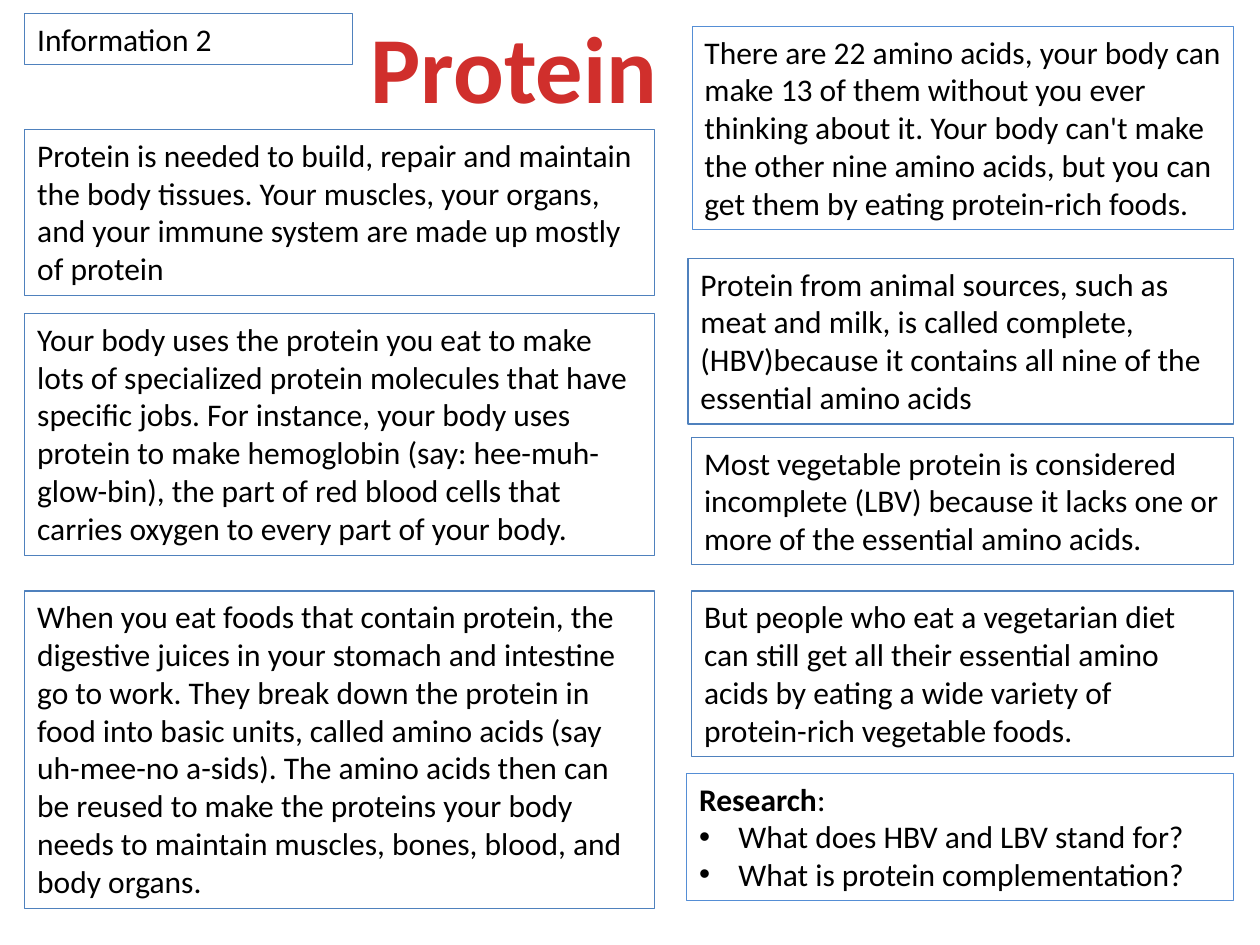
from dataclasses import dataclass

from lxml.etree import SubElement
from pptx import Presentation
from pptx.dml.color import RGBColor as Color
from pptx.enum.shapes import MSO_SHAPE as Preset
from pptx.enum.text import MSO_ANCHOR as Anchor
from pptx.enum.text import MSO_AUTO_SIZE as AutoSize
from pptx.enum.text import PP_ALIGN as Align
from pptx.oxml.ns import qn
from pptx.util import Pt


@dataclass(frozen=True)
class Theme:
    font: str = "Calibri"
    title_size: float = 54
    body_size: float = 18
    title: str = "D02F2C"
    text: str = "000000"
    paper: str = "FFFFFF"
    border: str = "4F81BD"
    light_border: str = "558ED5"
    border_width: float = 0.75
    thin_border_width: float = 0.5
    bullet_indent: float = 22.5


class SlideBuilder:
    def __init__(self, slide, theme):
        self.slide = slide
        self.theme = theme

    def add_run(self, paragraph, text, size=None, color=None, bold=False):
        run = paragraph.add_run()
        run.text = text
        font = run.font
        font.name = self.theme.font
        font.size = Pt(size or self.theme.body_size)
        font.bold = bold
        font.color.rgb = Color.from_string(color or self.theme.text)

    def title(self, text, left, top, width, height):
        shape = self.slide.shapes.add_textbox(Pt(left), Pt(top), Pt(width), Pt(height))
        frame = shape.text_frame
        frame.word_wrap = True
        frame.auto_size = AutoSize.SHAPE_TO_FIT_TEXT
        paragraph = frame.paragraphs[0]
        paragraph.alignment = Align.CENTER
        self.add_run(paragraph, text, self.theme.title_size, self.theme.title, bold=True)

    def box(self, left, top, width, height, text="", border=None, line_width=None, fill=None):
        shape = self.slide.shapes.add_shape(
            Preset.RECTANGLE, Pt(left), Pt(top), Pt(width), Pt(height))
        shape.shadow.inherit = False
        if fill:
            shape.fill.solid()
            shape.fill.fore_color.rgb = Color.from_string(fill)
        else:
            shape.fill.background()
        shape.line.color.rgb = Color.from_string(border or self.theme.border)
        shape.line.width = Pt(line_width or self.theme.border_width)
        frame = shape.text_frame
        frame.word_wrap = True
        frame.vertical_anchor = Anchor.TOP
        frame.auto_size = AutoSize.SHAPE_TO_FIT_TEXT
        paragraph = frame.paragraphs[0]
        paragraph.alignment = Align.LEFT
        if text:
            self.add_run(paragraph, text)
        return frame

    def bullet(self, frame, text):
        paragraph = frame.add_paragraph()
        paragraph.alignment = Align.LEFT
        self.add_run(paragraph, text)
        properties = paragraph._p.get_or_add_pPr()
        indent = Pt(self.theme.bullet_indent)
        properties.set("marL", str(indent))
        properties.set("indent", str(-indent))
        SubElement(properties, qn("a:buFont"), typeface="Arial")
        SubElement(properties, qn("a:buChar"), char="•")


LEFT_EDGE, LEFT_WIDTH = 14.2, 360
RIGHT_EDGE = 705

# Left column: top, height, text
LEFT_NOTES = [
    (74.1, 94.6, "Protein is needed to build, repair and maintain the body tissues. "
     "Your muscles, your organs, and your immune system are made up mostly of protein"),
    (179.2, 138.2, "Your body uses the protein you eat to make lots of specialized protein "
     "molecules that have specific jobs. For instance, your body uses protein to make "
     "hemoglobin (say: hee-muh-glow-bin), the part of red blood cells that carries oxygen "
     "to every part of your body."),
    (337.7, 181.7, "When you eat foods that contain protein, the digestive juices in your "
     "stomach and intestine go to work. They break down the protein in food into basic "
     "units, called amino acids (say uh-mee-no a-sids). The amino acids then can be reused "
     "to make the proteins your body needs to maintain muscles, bones, blood, and body "
     "organs."),
]

# Right column: left, top, height, text
RIGHT_NOTES = [
    (393.2, 147.7, 94.6, "Protein from animal sources, such as meat and milk, is called "
     "complete, (HBV)because it contains all nine of the essential amino acids"),
    (395.2, 250, 72.7, "Most vegetable protein is considered incomplete (LBV) because it "
     "lacks one or more of the essential amino acids."),
    (395.2, 337.7, 94.6, "But people who eat a vegetarian diet can still get all their "
     "essential amino acids by eating a wide variety of protein-rich vegetable foods."),
]

AMINO_ACIDS = (
    "There are 22 amino acids, your body can make 13 of them without you ever thinking "
    "about it. Your body can't make the other nine amino acids, but you can get them by "
    "eating protein-rich foods.")

QUESTIONS = ["What does HBV and LBV stand for?", "What is protein complementation?"]


def main():
    presentation = Presentation()
    presentation.slide_width, presentation.slide_height = Pt(720), Pt(540)
    slide = presentation.slides.add_slide(presentation.slide_layouts[6])
    theme = Theme()
    builder = SlideBuilder(slide, theme)

    # Heading
    builder.box(LEFT_EDGE, 7.9, 187.2, 29.1, "Information 2")
    builder.title("Protein", 201.6, 1.4, 184.3, 72.7)

    # Left column
    for top, height, text in LEFT_NOTES:
        builder.box(LEFT_EDGE, top, LEFT_WIDTH, height, text)

    # Right column
    builder.box(395.5, 15.1, RIGHT_EDGE - 395.5, 116.3, AMINO_ACIDS,
                theme.light_border, theme.thin_border_width, theme.paper)
    for left, top, height, text in RIGHT_NOTES:
        builder.box(left, top, RIGHT_EDGE - left, height, text)

    # Research questions
    research = builder.box(392.4, 441.9, RIGHT_EDGE - 392.4, 72.7, border=theme.light_border)
    builder.add_run(research.paragraphs[0], "Research", bold=True)
    builder.add_run(research.paragraphs[0], ":")
    for question in QUESTIONS:
        builder.bullet(research, question)

    presentation.save("out.pptx")


if __name__ == "__main__":
    main()
